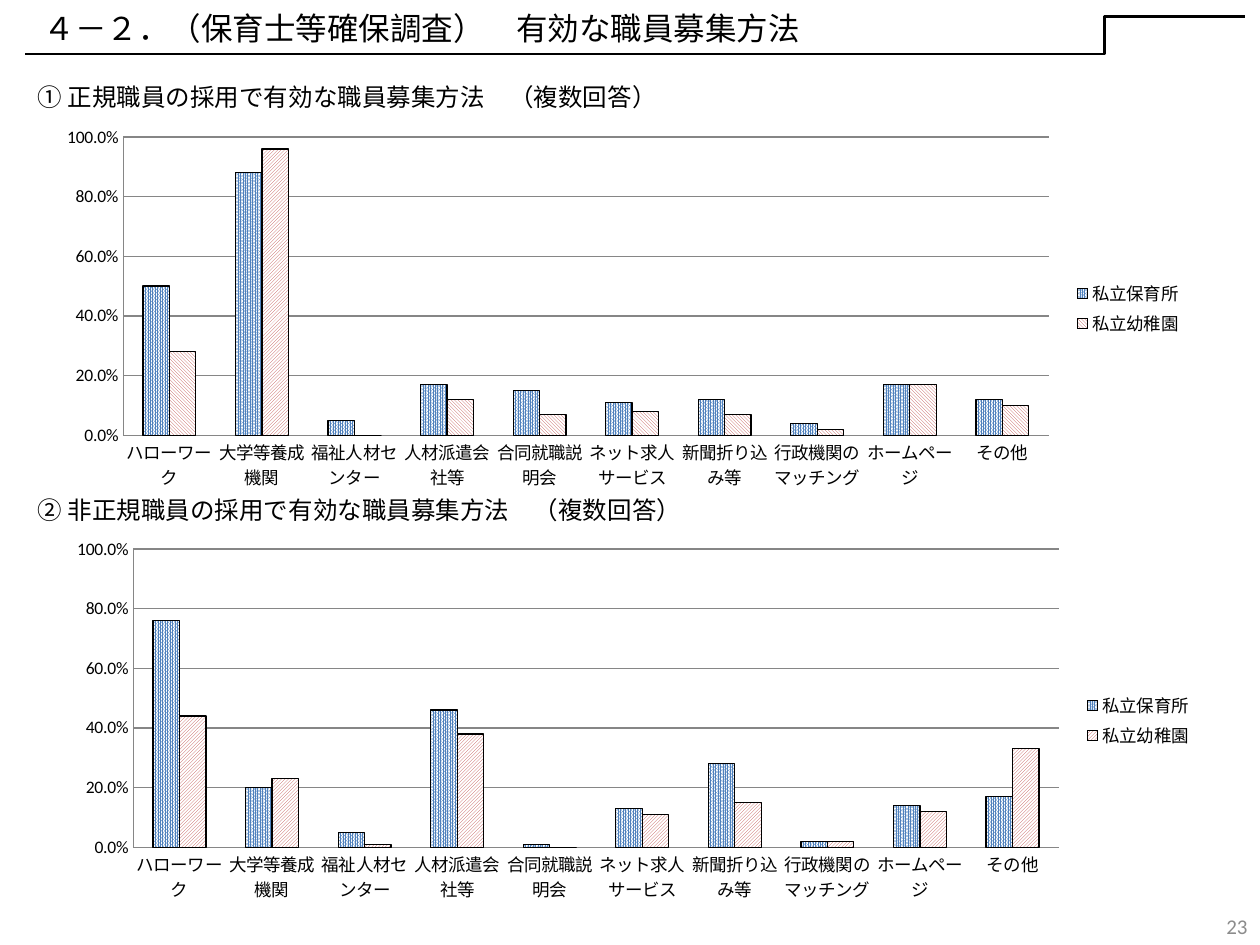
from lxml import etree
from pptx import Presentation
from pptx import util as u
from pptx.chart.data import CategoryChartData
from pptx.dml.color import RGBColor
from pptx.enum import chart as charts, dml, shapes, text
from pptx.oxml.ns import qn

COLORS = {"ink": "000000", "paper": "FFFFFF", "number": "8C8C8C",
          "grid": "868686", "nursery": "4F81BD", "kindergarten": "C0504D"}
JAPANESE, LATIN = "Noto Sans CJK JP", "Calibri"
UPWARD = dml.MSO_PATTERN.LIGHT_UPWARD_DIAGONAL
DOWNWARD = dml.MSO_PATTERN.LIGHT_DOWNWARD_DIAGONAL
DENSE = dml.MSO_PATTERN.PERCENT_90

METHODS = ["ハローワーク", "大学等養成機関", "福祉人材センター", "人材派遣会社等",
           "合同就職説明会", "ネット求人サービス", "新聞折り込み等",
           "行政機関のマッチング", "ホームページ", "その他"]
REGULAR = {
    "私立保育所": [0.5, 0.88, 0.05, 0.17, 0.15, 0.11, 0.12, 0.04, 0.17, 0.12],
    "私立幼稚園": [0.28, 0.96, 0, 0.12, 0.07, 0.08, 0.07, 0.02, 0.17, 0.1],
}
NON_REGULAR = {
    "私立保育所": [0.76, 0.2, 0.05, 0.46, 0.01, 0.13, 0.28, 0.02, 0.14, 0.17],
    "私立幼稚園": [0.44, 0.23, 0.01, 0.38, 0, 0.11, 0.15, 0.02, 0.12, 0.33],
}


def color(name):
    return RGBColor.from_string(COLORS[name])


class SlideBuilder:
    def __init__(self, slide):
        self.slide = slide

    def text(self, box, words, size, font=JAPANESE, ink="ink",
             anchor=text.MSO_ANCHOR.TOP, align=text.PP_ALIGN.LEFT):
        shape = self.slide.shapes.add_textbox(*map(u.Inches, box))
        frame = shape.text_frame
        frame.word_wrap = True
        frame.vertical_anchor = anchor
        frame.text = words
        paragraph = frame.paragraphs[0]
        paragraph.alignment = align
        run = paragraph.runs[0]
        run.font.size = u.Pt(size)
        run.font.name = font
        run.font.color.rgb = color(ink)
        east_asian = etree.SubElement(run.font._element, qn("a:ea"))
        east_asian.set("typeface", font)

    def elbow(self, start, end, bend):
        connector = self.slide.shapes.add_connector(
            shapes.MSO_CONNECTOR.ELBOW, *map(u.Inches, start + end))
        connector.line.color.rgb = color("ink")
        connector.line.width = u.Pt(1.5)
        properties = connector._element.spPr
        etree.SubElement(properties, qn("a:effectLst"))
        guides = properties.find(qn("a:prstGeom")).get_or_add_avLst()
        guide = etree.SubElement(guides, qn("a:gd"))
        guide.set("name", "adj1")
        guide.set("fmla", f"val {round(bend * 100000)}")

    def pattern(self, bar_format, pattern, foreground):
        fill = bar_format.fill
        fill.patterned()
        fill.pattern = pattern
        fill.fore_color.rgb = color(foreground)
        fill.back_color.rgb = color("paper")
        bar_format.line.color.rgb = color("ink")
        bar_format.line.width = u.Pt(0.75)

    def chart_font(self, font):
        font.size = u.Pt(10)
        font.name = LATIN
        font.color.rgb = color("ink")

    def column_chart(self, left, top, rows, kindergarten_pattern):
        data = CategoryChartData(number_format="0.0%")
        data.categories = METHODS
        for name, values in rows.items():
            data.add_series(name, values)
        chart = self.slide.shapes.add_chart(
            charts.XL_CHART_TYPE.COLUMN_CLUSTERED,
            *map(u.Inches, (left, top, 9.13, 3)), data).chart
        chart.has_title = False
        self.chart_font(chart.font)
        chart.has_legend = True
        chart.legend.position = charts.XL_LEGEND_POSITION.RIGHT
        chart.legend.include_in_layout = False

        scale = chart.value_axis
        scale.minimum_scale, scale.maximum_scale, scale.major_unit = 0, 1, 0.2
        scale.tick_labels.number_format = "0.0%"
        scale.tick_labels.number_format_is_linked = False
        scale.has_major_gridlines = True
        for axis in (chart.category_axis, scale):
            axis.major_tick_mark = charts.XL_TICK_MARK.NONE
            axis.minor_tick_mark = charts.XL_TICK_MARK.NONE
        for owner in (chart.category_axis, scale, scale.major_gridlines):
            owner.format.line.color.rgb = color("grid")

        category_axis = chart.category_axis
        self.chart_font(category_axis.tick_labels.font)
        label_body = category_axis._element.find(qn("c:txPr")).find(qn("a:bodyPr"))
        label_body.set("rot", "0")
        label_body.set("vert", "horz")

        plot = chart.plots[0]
        plot.gap_width = 150
        plot.overlap = 0
        plot.vary_by_categories = False
        nursery, kindergarten = plot.series
        self.pattern(nursery.format, DENSE, "nursery")
        self.pattern(kindergarten.format, kindergarten_pattern, "kindergarten")
        return chart


def main():
    presentation = Presentation()
    presentation.slide_width = u.Inches(10)
    presentation.slide_height = u.Inches(7.5)
    builder = SlideBuilder(presentation.slides.add_slide(presentation.slide_layouts[6]))

    builder.text((0, 0, 10, 0.44), "　４－２．（保育士等確保調査）　有効な職員募集方法", 18,
                 anchor=text.MSO_ANCHOR.MIDDLE)
    builder.elbow((0.2, 0.43), (9.88, 0.13), 0.885)
    builder.text((0.2, 0.6, 5.3, 0.34), "① 正規職員の採用で有効な職員募集方法　（複数回答）", 14)
    builder.text((0.2, 3.88, 5.67, 0.34), "② 非正規職員の採用で有効な職員募集方法　（複数回答）", 14)

    regular = builder.column_chart(0.35, 0.95, REGULAR, DOWNWARD)
    training_schools = regular.plots[0].series[1].points[1]
    builder.pattern(training_schools.format, UPWARD, "kindergarten")
    builder.column_chart(0.43, 4.22, NON_REGULAR, UPWARD)

    builder.text((7.67, 7.1, 2.33, 0.4), "23", 12, LATIN, "number",
                 text.MSO_ANCHOR.BOTTOM, text.PP_ALIGN.RIGHT)
    presentation.save("out.pptx")


if __name__ == "__main__":
    main()
